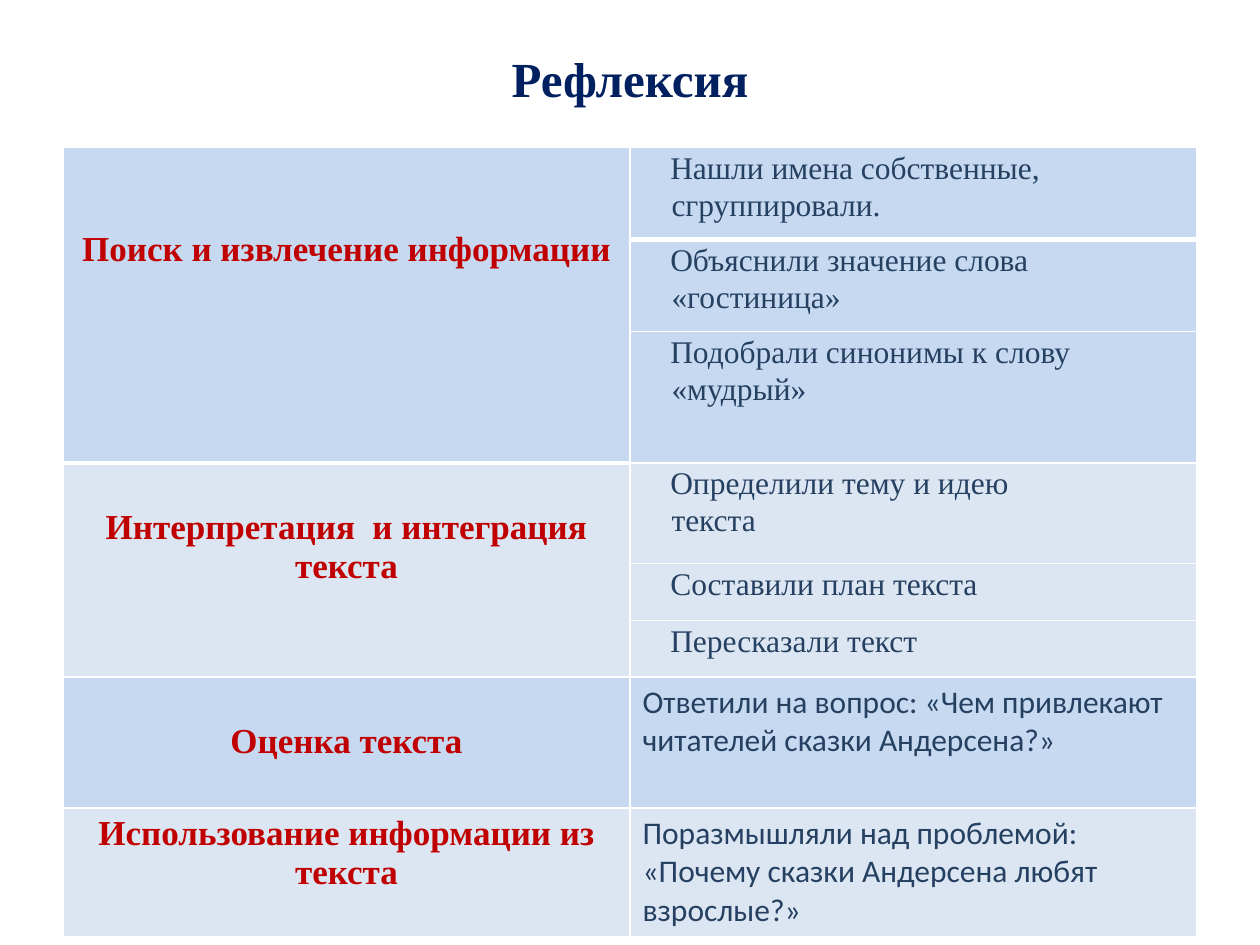
from dataclasses import dataclass
from lxml.etree import SubElement
from pptx import Presentation
from pptx.dml.color import RGBColor
from pptx.enum.text import MSO_ANCHOR, PP_ALIGN
from pptx.oxml.ns import qn
from pptx.slide import Slide
from pptx.table import Table, _Cell
from pptx.text.text import _Paragraph
from pptx.util import Inches, Pt

HUES = {
    "title": "002060",
    "part": "C00000",
    "task": "254061",
    "deep": "C6D9F1",
    "pale": "DCE6F2",
    "line": "FFFFFF",
}
SERIF = "Times New Roman"
SANS = "Calibri"


@dataclass
class Task:
    text: str
    height: float
    font: str = SERIF
    right: float = 0.08


@dataclass
class Part:
    name: str
    fill: str
    top: float
    tasks: list[Task]


PARTS = [
    Part("Поиск и извлечение информации", "deep", 0.66, [
        Task("Нашли имена собственные, сгруппировали.", 0.73),
        Task("Объяснили значение слова «гостиница»", 0.73),
        Task("Подобрали синонимы к слову «мудрый»", 1.02),
    ]),
    Part("Интерпретация  и интеграция текста", "pale", 0.36, [
        Task("Определили тему и идею текста", 0.8, right=1),
        Task("Составили план текста", 0.45),
        Task("Пересказали текст", 0.45),
    ]),
    Part("Оценка текста", "deep", 0.36, [
        Task("Ответили на вопрос: «Чем привлекают читателей сказки Андерсена?»",
             1.04, SANS),
    ]),
    Part("Использование информации из текста", "pale", 0.05, [
        Task("Поразмышляли над проблемой: «Почему сказки Андерсена любят взрослые?»",
             1.02, SANS),
    ]),
]


def style(para: _Paragraph, font: str, size: int, hue: str, bold: bool) -> None:
    for run in para.runs:
        run.font.name = font
        run.font.size = Pt(size)
        run.font.bold = bold
        run.font.color.rgb = RGBColor.from_string(HUES[hue])


def paint(cell: _Cell, fill: str, top: int = 1, base: int = 1) -> None:
    props = cell._tc.get_or_add_tcPr()
    for side, width in {"L": 1, "R": 1, "T": top, "B": base}.items():
        line = SubElement(props, qn(f"a:ln{side}"), w=str(Pt(width)))
        solid = SubElement(line, qn("a:solidFill"))
        SubElement(solid, qn("a:srgbClr"), val=HUES["line"])
    cell.fill.solid()
    cell.fill.fore_color.rgb = RGBColor.from_string(HUES[fill])


def add_title(slide: Slide, text: str) -> None:
    box = slide.shapes.add_textbox(Inches(0.5), Inches(0.3), Inches(9), Inches(0.64))
    frame = box.text_frame
    frame.word_wrap = True
    frame.vertical_anchor = MSO_ANCHOR.MIDDLE
    frame.text = text
    para = frame.paragraphs[0]
    para.alignment = PP_ALIGN.CENTER
    style(para, SERIF, 28, "title", True)


def add_part(table: Table, part: Part, row: int) -> None:
    last = row + len(part.tasks) - 1
    cell = table.cell(row, 0)
    if last > row:
        cell.merge(table.cell(last, 0))
    paint(cell, part.fill, 3 if row == 3 else 1, 3 if row == 0 else 1)
    cell.margin_top = Inches(part.top)
    cell.text_frame.text = part.name
    para = cell.text_frame.paragraphs[0]
    para.alignment = PP_ALIGN.CENTER
    style(para, SERIF, 20, "part", True)


def add_task(table: Table, task: Task, fill: str, row: int) -> None:
    table.rows[row].height = Inches(task.height)
    cell = table.cell(row, 1)
    paint(cell, fill, 3 if row == 1 else 1, 3 if row == 0 else 1)
    cell.text_frame.text = task.text
    para = cell.text_frame.paragraphs[0]
    if task.font == SERIF:
        cell.margin_left = Inches(0.07)
        cell.margin_right = Inches(task.right)
        cell.margin_top = Inches(0.01)
        cell.margin_bottom = Inches(0)
        para.line_spacing = 1.07
        props = para._p.get_or_add_pPr()
        props.set("marL", str(Inches(0.26)))
        props.set("indent", str(Inches(-0.01)))
    style(para, task.font, 18, "task", False)


def add_grid(slide: Slide, parts: list[Part]) -> None:
    tasks = [task for part in parts for task in part.tasks]
    high = sum(task.height for task in tasks)
    table = slide.shapes.add_table(
        len(tasks), 2, Inches(0.5), Inches(1.17), Inches(9), Inches(high)
    ).table
    table.first_row = False
    table.horz_banding = False
    row = 0
    for part in parts:
        add_part(table, part, row)
        for task in part.tasks:
            add_task(table, task, part.fill, row)
            row += 1


def main() -> None:
    deck = Presentation()
    deck.slide_width = Inches(10)
    deck.slide_height = Inches(7.5)
    slide = deck.slides.add_slide(deck.slide_layouts[6])
    add_title(slide, "Рефлексия")
    add_grid(slide, PARTS)
    deck.save("out.pptx")


if __name__ == "__main__":
    main()
